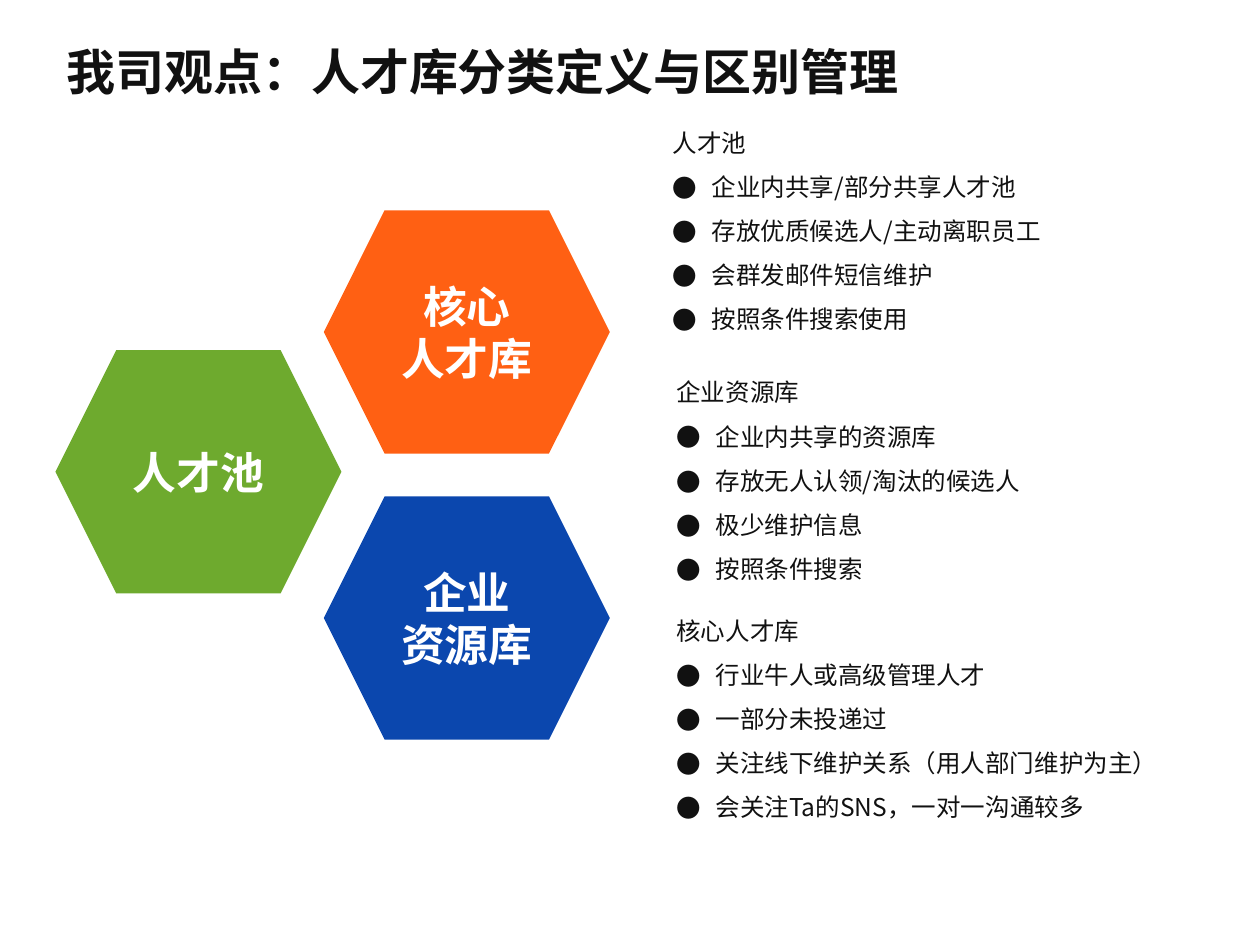
"""Build a slide on talent pool categories: three hexagons and their definitions."""
from lxml import etree
from pptx import Presentation
from pptx.dml.color import RGBColor
from pptx.enum.shapes import MSO_SHAPE
from pptx.enum.text import MSO_ANCHOR, MSO_AUTO_SIZE, PP_ALIGN
from pptx.oxml.ns import qn
from pptx.util import Inches, Pt

HEXAGON = MSO_SHAPE.HEXAGON
MIDDLE, TOP = MSO_ANCHOR.MIDDLE, MSO_ANCHOR.TOP
CENTER, LEFT = PP_ALIGN.CENTER, PP_ALIGN.LEFT
GROW = MSO_AUTO_SIZE.SHAPE_TO_FIT_TEXT
FACE = "Noto Sans CJK SC"
INK = RGBColor(0x11, 0x11, 0x11)
WHITE = RGBColor(0xFF, 0xFF, 0xFF)
BLUE = RGBColor(0x0B, 0x47, 0xAE)
GREEN = RGBColor(0x6E, 0xAA, 0x2E)
ORANGE = RGBColor(0xFF, 0x60, 0x13)

TITLE = {"size": Pt(28), "bold": True, "name": FACE}
LABEL = {"size": Pt(25), "bold": True, "name": FACE}
BODY = {"size": Pt(14), "bold": False, "name": FACE}


def write_lines(frame, lines, style, color, align=LEFT, spacing=None):
    frame.word_wrap = True
    for index, line in enumerate(lines):
        paragraph = frame.paragraphs[0] if index == 0 else frame.add_paragraph()
        paragraph.alignment = align
        paragraph.line_spacing = spacing
        run = paragraph.add_run()
        run.text = line
        for attribute, value in style.items():
            setattr(run.font, attribute, value)
        run.font.color.rgb = color
        etree.SubElement(run.font._element, qn("a:ea"), typeface=FACE)


def add_bullet(paragraph):
    properties = paragraph._p.get_or_add_pPr()
    properties.set("marL", str(Inches(0.31)))
    properties.set("indent", str(Inches(-0.31)))
    etree.SubElement(properties, qn("a:buFont"), typeface=FACE)
    etree.SubElement(properties, qn("a:buChar"), char="●")


prs = Presentation()
prs.slide_width, prs.slide_height = Inches(10), Inches(7.5)
slide = prs.slides.add_slide(prs.slide_layouts[6])

title = slide.shapes.add_textbox(Inches(0.43), Inches(0.28), Inches(9.14), Inches(0.79))
title.text_frame.vertical_anchor = TOP
write_lines(title.text_frame, ["我司观点：人才库分类定义与区别管理"], TITLE, INK)

categories = [
    (2.57, 3.94, BLUE, ["企业", "资源库"]),
    (0.44, 2.78, GREEN, ["人才池"]),
    (2.57, 1.67, ORANGE, ["核心", "人才库"]),
]
for left, top, color, label in categories:
    hexagon = slide.shapes.add_shape(
        HEXAGON, Inches(left), Inches(top), Inches(2.27), Inches(1.93))
    hexagon.shadow.inherit = False
    hexagon.fill.solid()
    hexagon.fill.fore_color.rgb = color
    hexagon.line.fill.background()
    hexagon.text_frame.vertical_anchor = MIDDLE
    write_lines(hexagon.text_frame, label, LABEL, WHITE, CENTER)

definitions = [
    (5.27, 2.83, 3.15, 1.87, [
        "企业资源库", "企业内共享的资源库", "存放无人认领/淘汰的候选人",
        "极少维护信息", "按照条件搜索"]),
    (5.27, 4.72, 4.41, 1.87, [
        "核心人才库", "行业牛人或高级管理人才", "一部分未投递过",
        "关注线下维护关系（用人部门维护为主）", "会关注Ta的SNS，一对一沟通较多"]),
    (5.24, 0.85, 3.15, 2.2, [
        "人才池", "企业内共享/部分共享人才池", "存放优质候选人/主动离职员工",
        "会群发邮件短信维护", "按照条件搜索使用"]),
]
for left, top, width, height, lines in definitions:
    definition = slide.shapes.add_textbox(
        Inches(left), Inches(top), Inches(width), Inches(height))
    definition.text_frame.auto_size = GROW
    write_lines(definition.text_frame, lines, BODY, INK, spacing=1.5)
    for paragraph in definition.text_frame.paragraphs[1:]:
        add_bullet(paragraph)

prs.save("out.pptx")
